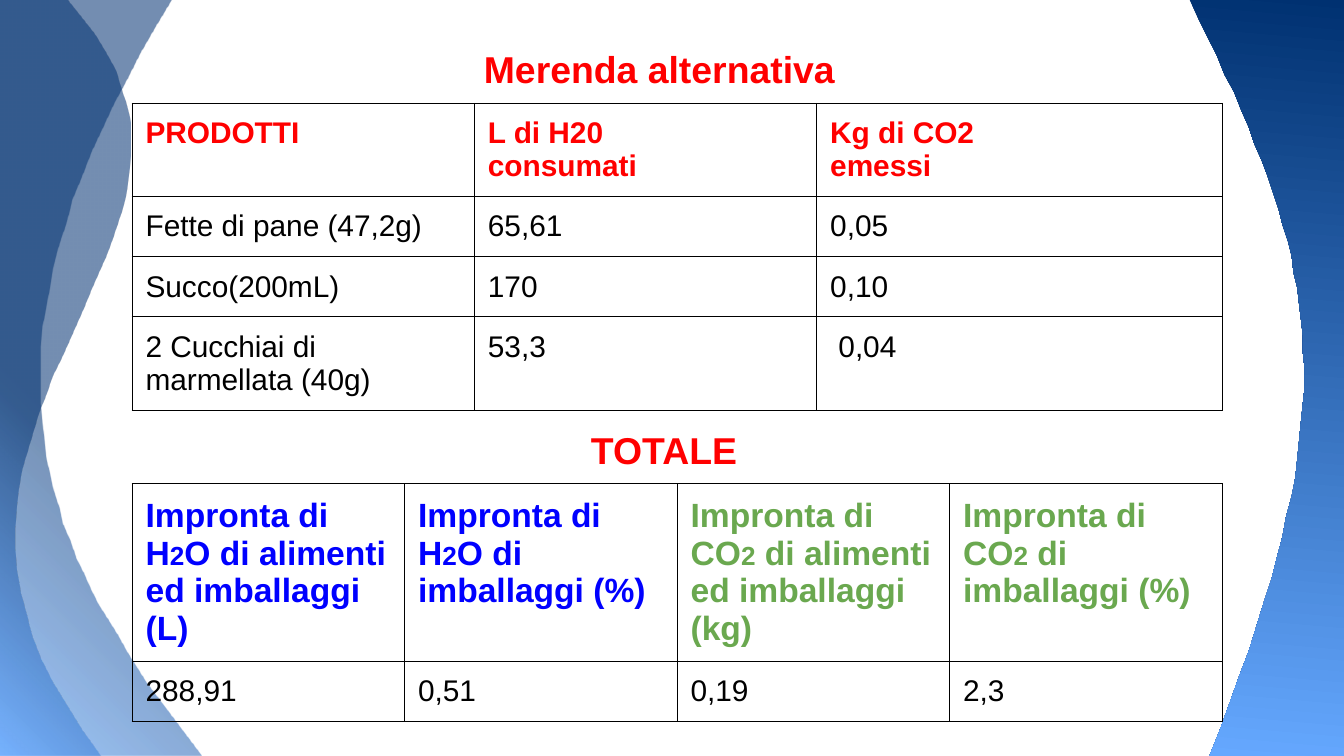
import pptx
import pptx.util
import pptx.dml.color
import pptx.enum.text
import pptx.oxml
import pptx.oxml.ns
from lxml import etree

Pt = pptx.util.Pt
FONT = "Arial"
COLORS = {"red": "FF0000", "black": "000000", "blue": "0000FF", "green": "6AA84F",
          "navy": "003171", "sky": "549FFF", "light": "65A8FF"}
SLIDE = (720, 405)
INSET = 7.2

# Wave outlines in points: a start, then line ends (2 numbers) or curves (6 numbers)
LEFT_WAVES = [
    [(108, 405), (0, 405), (0, 0), (91.5, 0), (-27.4, 196, 23.8, 297.5, 108, 405)],
    [(54, 405), (0.5, 405), (0.5, 0), (36, 0), (156, 131, -88, 222, 54, 405)],
]
RIGHT_WAVE = [(723, 405), (648, 405), (727, 204.5, 706, 141, 637.2, -0.7), (723, -0.7)]

PRODUCTS = [
    ["PRODOTTI", "L di H20\nconsumati", "Kg di CO2\nemessi"],
    ["Fette di pane (47,2g)", "65,61", "0,05"],
    ["Succo(200mL)", "170", "0,10"],
    ["2 Cucchiai di marmellata (40g)", "53,3", " 0,04"],
]
# Each heading: text before the small 2, text after it, colour
TOTAL_HEADINGS = [
    ("Impronta di H", "O di alimenti ed imballaggi (L)", "blue"),
    ("Impronta di H", "O di imballaggi (%)", "blue"),
    ("Impronta di CO", " di alimenti ed imballaggi (kg)", "green"),
    ("Impronta di CO", " di imballaggi (%)", "green"),
]
TOTALS = ["288,91", "0,51", "0,19", "2,3"]


def set_font(font, size, color, bold=False):
    font.name, font.size, font.bold = FONT, Pt(size), bold
    font.color.rgb = pptx.dml.color.RGBColor.from_string(COLORS[color])


def gradient(stops, direction, alpha):
    """Return a gradient fill; stops are (percent, colour name)."""
    marks = "".join(
        f'<a:gs pos="{at * 1000}"><a:srgbClr val="{COLORS[color]}">'
        f'<a:alpha val="{alpha * 1000}"/></a:srgbClr></a:gs>' for at, color in stops)
    return pptx.oxml.parse_xml(
        f'<a:gradFill {pptx.oxml.ns.nsdecls("a")} rotWithShape="1">'
        f'<a:gsLst>{marks}</a:gsLst>{direction}</a:gradFill>')


def curve_points(start, curve, steps=40):
    ends = [start, curve[:2], curve[2:4], curve[4:]]
    for step in range(1, steps + 1):
        t = step / steps
        weights = ((1 - t) ** 3, 3 * t * (1 - t) ** 2, 3 * t * t * (1 - t), t ** 3)
        yield tuple(sum(w * end[axis] for w, end in zip(weights, ends)) for axis in (0, 1))


def add_wave(page, outline, stops, direction, alpha=100):
    points = [outline[0]]
    for part in outline[1:]:
        points.extend([part] if len(part) == 2 else curve_points(points[-1], part))
    builder = page.shapes.build_freeform(*points[0], scale=float(Pt(1)))
    builder.add_line_segments(points[1:], close=True)
    wave = builder.convert_to_shape()
    wave.shadow.inherit = False
    wave.line.fill.background()
    wave.fill.background()
    empty = wave._element.spPr.find(pptx.oxml.ns.qn("a:noFill"))
    empty.getparent().replace(empty, gradient(stops, direction, alpha))


def add_waves(page):
    corner = ('<a:path path="circle"><a:fillToRect l="0" t="100000" r="100000" b="0"/>'
              '</a:path>')
    for outline in LEFT_WAVES:
        add_wave(page, outline, [(0, "sky"), (41, "navy"), (100, "navy")], corner, 54)
    add_wave(page, RIGHT_WAVE, [(0, "navy"), (100, "light")],
             '<a:lin ang="5700000" scaled="0"/>')


def place_heading(box, text, left, top, width, height):
    box.left, box.top, box.width, box.height = map(Pt, (left, top, width, height))
    frame = box.text_frame
    frame.text = text
    frame.word_wrap = True
    frame.auto_size = pptx.enum.text.MSO_AUTO_SIZE.NONE
    frame.vertical_anchor = pptx.enum.text.MSO_ANCHOR.TOP
    para = frame.paragraphs[0]
    para.alignment = pptx.enum.text.PP_ALIGN.LEFT
    para.line_spacing = 1.0
    set_font(para.font, 20, "red", True)


def frame_cell(cell):
    """Clear the fill, set the insets and draw thin black borders."""
    cell.fill.background()
    cell.margin_left = cell.margin_right = Pt(INSET)
    cell.margin_top = cell.margin_bottom = Pt(INSET)
    for index, side in enumerate(("lnL", "lnR", "lnT", "lnB")):
        border = pptx.oxml.parse_xml(
            f'<a:{side} {pptx.oxml.ns.nsdecls("a")} w="{Pt(0.75)}"><a:solidFill>'
            f'<a:srgbClr val="{COLORS["black"]}"/></a:solidFill></a:{side}>')
        cell._tc.tcPr.insert(index, border)


def add_grid(page, left, top, widths, heights):
    table = page.shapes.add_table(
        len(heights), len(widths), Pt(left), Pt(top),
        Pt(sum(widths)), Pt(sum(heights))).table
    table.first_row = table.horz_banding = False
    for column, width in zip(table.columns, widths):
        column.width = Pt(width)
    for row, height in zip(table.rows, heights):
        row.height = Pt(height)
    for cell in table.iter_cells():
        frame_cell(cell)
    return table


def fill_cell(cell, text, color="black", bold=False):
    cell.text = text
    for para in cell.text_frame.paragraphs:
        set_font(para.font, 16, color, bold)


def add_products(page, left, top, width):
    table = add_grid(page, left, top, [183.4, 183.4, width - 366.8], [50, 32, 32, 50])
    for r, values in enumerate(PRODUCTS):
        for c, value in enumerate(values):
            header = r == 0
            fill_cell(table.cell(r, c), value, "red" if header else "black", header)


def add_totals(page, left, top, width):
    count = len(TOTALS)
    table = add_grid(page, left, top, [width / count] * count, [95, 32])
    for c, (before, after, color) in enumerate(TOTAL_HEADINGS):
        para = table.cell(0, c).text_frame.paragraphs[0]
        for text, size in ((before, 18), ("2", 14), (after, 18)):
            span = para.add_run()
            span.text = text
            set_font(span.font, size, color, True)
        fill_cell(table.cell(1, c), TOTALS[c])


def main():
    deck = pptx.Presentation()
    deck.slide_width, deck.slide_height = map(Pt, SLIDE)
    page = deck.slides.add_slide(deck.slide_layouts[5])
    # Background
    add_waves(page)
    # Snack table
    place_heading(page.shapes.title, "Merenda alternativa", 252, 21, 232.5, 32)
    add_products(page, 70.8, 55.4, 584)
    # Totals table
    place_heading(page.shapes.add_textbox(0, 0, 0, 0), "TOTALE", 309.5, 225.4, 142, 32)
    add_totals(page, 70.8, 259.2, 584)
    deck.save("out.pptx")


if __name__ == "__main__":
    main()
